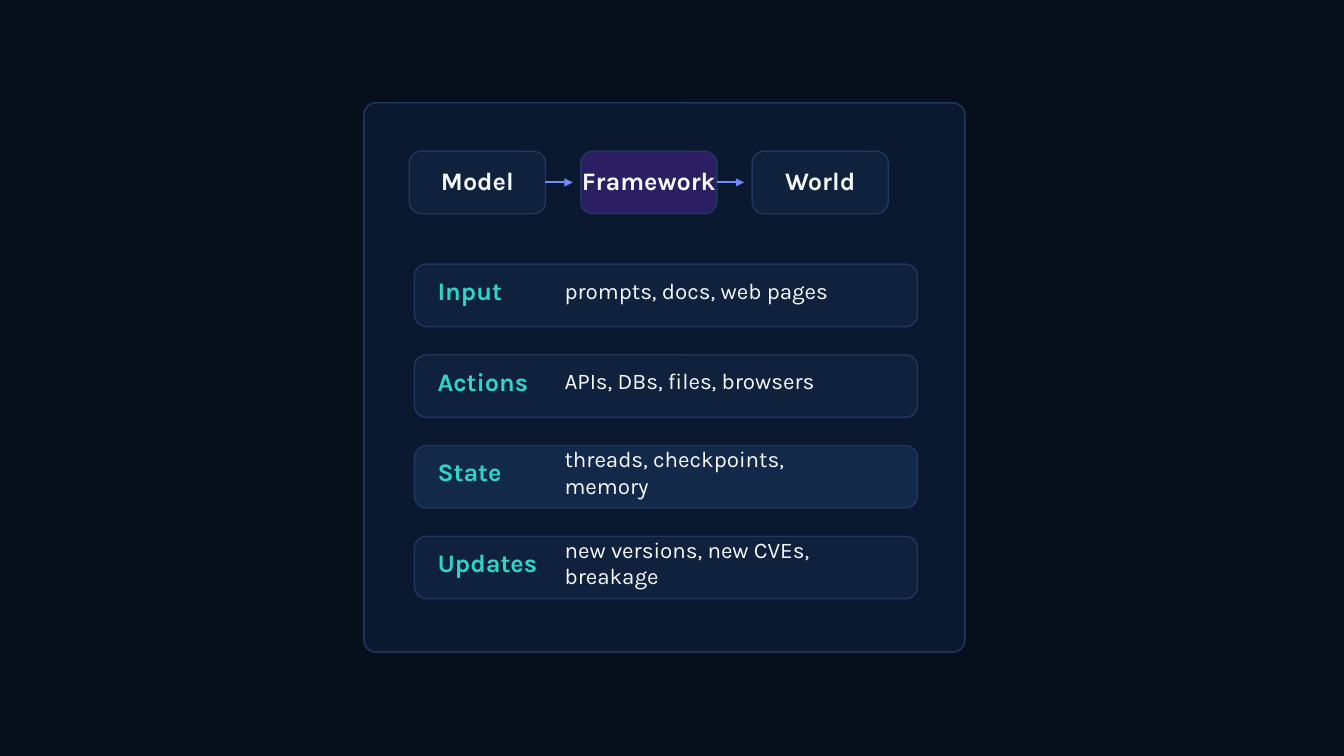
from lxml.etree import SubElement
from pptx import Presentation
from pptx.dml.color import RGBColor
from pptx.enum.shapes import MSO_CONNECTOR, MSO_SHAPE
from pptx.enum.text import MSO_ANCHOR, PP_ALIGN
from pptx.oxml.ns import qn
from pptx.util import Inches, Pt

FONT = "Karla"
BACKDROP, PANEL, BORDER = "06101D", "0A1830", "20385E"
CARD, CARD_STATE, CARD_FRAMEWORK = "10213D", "132949", "2B1E62"
WHITE, TEAL, ARROW = "F7FAFF", "30D5C8", "6F8BFF"
CORNER = 0.12
CARD_HEIGHT = 0.62

STAGES = [("Model", CARD), ("Framework", CARD_FRAMEWORK), ("World", CARD)]
# label, label width, details, details width, card colour
CONCERNS = [
    ("Input", 0.9, "prompts, docs, web pages", 3.04, CARD),
    ("Actions", 0.9, "APIs, DBs, files, browsers", 3.04, CARD),
    ("State", 0.9, "threads, checkpoints, memory", 3.04, CARD_STATE),
    ("Updates", 1.11, "new versions, new CVEs, breakage", 3.38, CARD),
]


def color(hex_string):
    return RGBColor.from_string(hex_string)


def add_card(slide, left, top, width, height, fill):
    card = slide.shapes.add_shape(
        MSO_SHAPE.ROUNDED_RECTANGLE,
        Inches(left), Inches(top), Inches(width), Inches(height))
    card.adjustments[0] = CORNER / min(width, height)
    card.shadow.inherit = False
    card.fill.solid()
    card.fill.fore_color.rgb = color(fill)
    card.line.color.rgb = color(BORDER)
    card.line.width = Pt(1)
    return card


def add_label(slide, left, top, width, height, text, size, ink,
              bold=False, align=PP_ALIGN.LEFT):
    label = slide.shapes.add_textbox(
        Inches(left), Inches(top), Inches(width), Inches(height))
    frame = label.text_frame
    frame.word_wrap = True
    frame.vertical_anchor = MSO_ANCHOR.MIDDLE
    frame.margin_left = frame.margin_right = 0
    frame.margin_top = frame.margin_bottom = 0
    paragraph = frame.paragraphs[0]
    paragraph.alignment = align
    run = paragraph.add_run()
    run.text = text
    run.font.name = FONT
    run.font.size = Pt(size)
    run.font.bold = bold
    run.font.color.rgb = color(ink)


def add_arrow(slide, source, length):
    """Draw an arrow to the right from the middle of the source's right side."""
    start = source.left + source.width
    middle = source.top + source.height // 2
    arrow = slide.shapes.add_connector(
        MSO_CONNECTOR.STRAIGHT, start, middle, start + Inches(length), middle)
    arrow.begin_connect(source, 3)
    arrow.line.color.rgb = color(ARROW)
    arrow.line.width = Pt(1.5)
    SubElement(arrow.line._get_or_add_ln(), qn("a:tailEnd"), type="triangle")
    SubElement(arrow._element.spPr, qn("a:effectLst"))


def add_flow(slide, left, top):
    width, pitch = 1.35, 1.7
    cards = []
    for index, (stage, fill) in enumerate(STAGES):
        x = left + index * pitch
        cards.append(add_card(slide, x, top, width, CARD_HEIGHT, fill))
        add_label(slide, x, top + 0.21, width, 0.16, stage, 18, WHITE,
                  bold=True, align=PP_ALIGN.CENTER)
    for card in cards[:-1]:
        add_arrow(slide, card, 0.27)


def add_concerns(slide, left, top, width):
    pitch = 0.9
    for index, (name, name_width, details, details_width, fill) in enumerate(CONCERNS):
        y = top + index * pitch
        add_card(slide, left, y, width, CARD_HEIGHT, fill)
        add_label(slide, left + 0.23, y + 0.17, name_width, 0.18,
                  name, 18, TEAL, bold=True)
        add_label(slide, left + 1.49, y + 0.17, details_width, 0.18,
                  details, 16, WHITE)


def add_panel(slide, left, top, width, height):
    add_card(slide, left, top, width, height, PANEL)
    add_flow(slide, left + 0.45, top + 0.48)
    add_concerns(slide, left + 0.5, top + 1.6, 4.99)


def main():
    deck = Presentation()
    deck.slide_width, deck.slide_height = Inches(13.33), Inches(7.5)
    slide = deck.slides.add_slide(deck.slide_layouts[6])
    slide.background.fill.solid()
    slide.background.fill.fore_color.rgb = color(BACKDROP)
    add_panel(slide, 3.61, 1.02, 5.96, 5.45)
    deck.save("out.pptx")


if __name__ == "__main__":
    main()
